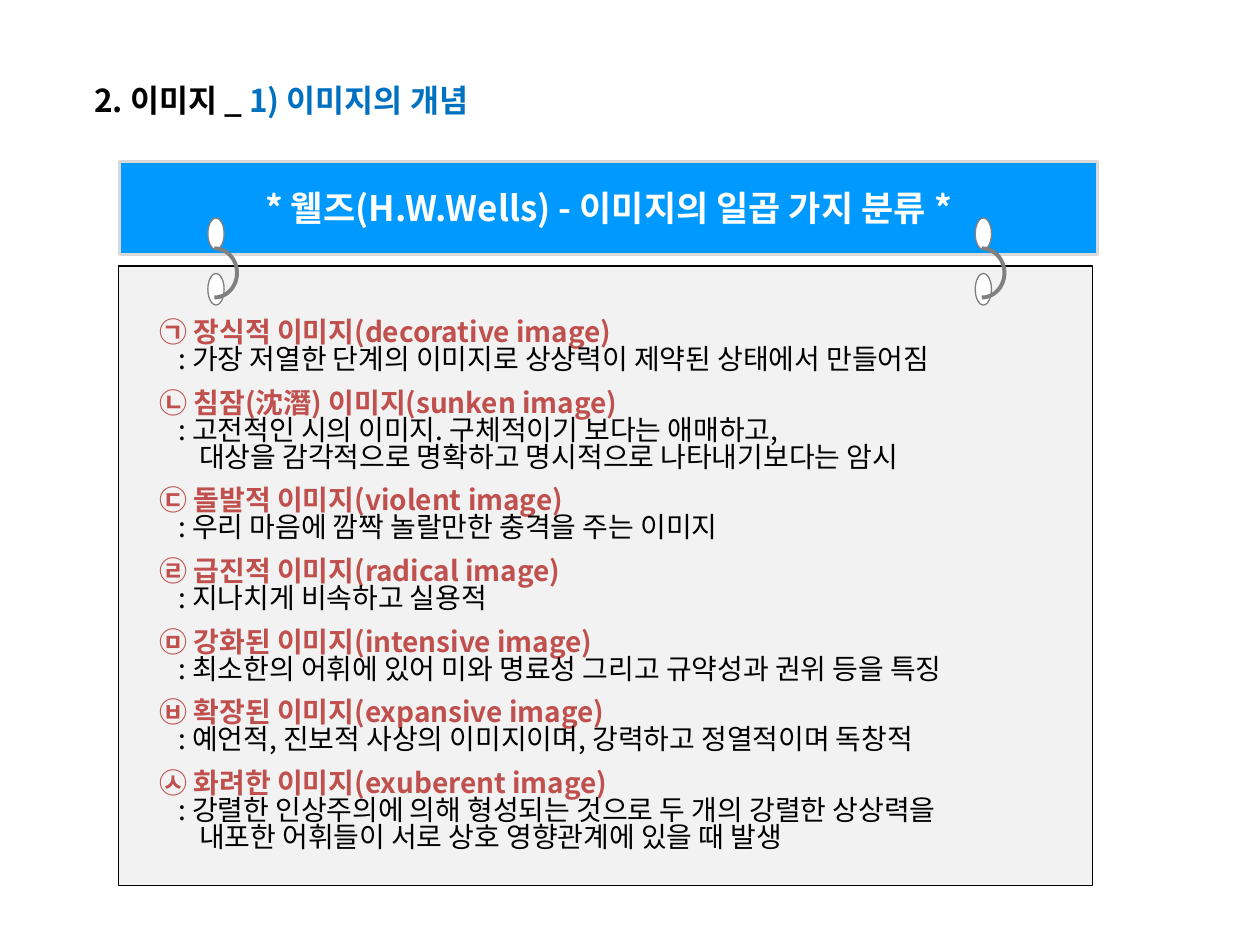
from pptx import Presentation
from pptx.dml.color import RGBColor
from pptx.enum.shapes import MSO_SHAPE
from pptx.enum.text import MSO_ANCHOR, PP_ALIGN
from pptx.util import Pt

FONT = "Noto Sans CJK KR"
BLACK, WHITE, GRAY = "000000", "FFFFFF", "808080"
RED, BLUE = "C0504D", "0070C0"
ITEMS = [
    ("㉠ 장식적 이미지(decorative image)",
     ["가장 저열한 단계의 이미지로 상상력이 제약된 상태에서 만들어짐"]),
    ("㉡ 침잠(沈潛) 이미지(sunken image)",
     ["고전적인 시의 이미지. 구체적이기 보다는 애매하고,",
      "대상을 감각적으로 명확하고 명시적으로 나타내기보다는 암시"]),
    ("㉢ 돌발적 이미지(violent image)",
     ["우리 마음에 깜짝 놀랄만한 충격을 주는 이미지"]),
    ("㉣ 급진적 이미지(radical image)",
     ["지나치게 비속하고 실용적"]),
    ("㉤ 강화된 이미지(intensive image)",
     ["최소한의 어휘에 있어 미와 명료성 그리고 규약성과 권위 등을 특징"]),
    ("㉥ 확장된 이미지(expansive image)",
     ["예언적, 진보적 사상의 이미지이며, 강력하고 정열적이며 독창적"]),
    ("㉦ 화려한 이미지(exuberent image)",
     ["강렬한 인상주의에 의해 형성되는 것으로 두 개의 강렬한 상상력을",
      "내포한 어휘들이 서로 상호 영향관계에 있을 때 발생"]),
]


def color(code):
    return RGBColor.from_string(code)


def shape(slide, kind, box, fill=None, line=BLACK, width=0.75):
    item = slide.shapes.add_shape(kind, *map(Pt, box))
    item.shadow.inherit = False
    if fill:
        item.fill.solid()
        item.fill.fore_color.rgb = color(fill)
    else:
        item.fill.background()
    item.line.color.rgb = color(line)
    item.line.width = Pt(width)
    return item


def frame(slide, box):
    area = slide.shapes.add_textbox(*map(Pt, box)).text_frame
    area.word_wrap = True
    return area


def text(par, words, size=16, ink=BLACK, bold=False, align=None,
         pitch=None, before=0, indent=0):
    """Add a run to a paragraph and set the format of both."""
    run = par.add_run()
    run.text = words
    font = run.font
    font.name, font.size, font.bold = FONT, Pt(size), bold
    font.color.rgb = color(ink)
    props = run._r.get_or_add_rPr()
    east = props.makeelement(
        "{http://schemas.openxmlformats.org/drawingml/2006/main}ea",
        {"typeface": FONT})
    props.append(east)
    if align is not None:
        par.alignment = align
    if pitch:
        par.line_spacing = Pt(pitch)
    if before:
        par.space_before = Pt(before)
    if indent:
        par._p.get_or_add_pPr().set("marL", str(Pt(indent)))


def title(slide, box):
    par = frame(slide, box).paragraphs[0]
    text(par, "2. 이미지 _", size=18, bold=True, pitch=22)
    text(par, " 1) 이미지의 개념", size=18, ink=BLUE, bold=True)


def banner(slide, box):
    area = shape(slide, MSO_SHAPE.RECTANGLE, box, "0099FF", "D9D9D9", 2).text_frame
    area.vertical_anchor = MSO_ANCHOR.MIDDLE
    text(area.paragraphs[0], "* 웰즈(H.W.Wells) - 이미지의 일곱 가지 분류 *",
         size=20, ink=WHITE, bold=True, align=PP_ALIGN.CENTER)


def panel(slide, box):
    left, top, width, _ = box
    shape(slide, MSO_SHAPE.RECTANGLE, box, "F2F2F2")
    area = frame(slide, (left + 16.5, top + 28, width - 22.5, 314))
    par = area.paragraphs[0]
    look = {"align": PP_ALIGN.JUSTIFY, "pitch": 15.4}
    for n, (head, lines) in enumerate(ITEMS):
        if n:
            par = area.add_paragraph()
        text(par, head, ink=RED, bold=True, before=9.6 if n else 0, **look)
        for k, line in enumerate(lines):
            text(area.add_paragraph(), line if k else ": " + line,
                 indent=22.5 if k else 10.5, **look)


def ring(slide, left, top):
    """Draw a binder ring: two holes joined by a half circle."""
    for drop in (0, 31.7):
        shape(slide, MSO_SHAPE.OVAL, (left, top + drop, 9.3, 18), WHITE, GRAY)
    arc = shape(slide, MSO_SHAPE.ARC, (left - 9.2, top + 17.3, 25.9, 28.1),
                line=GRAY, width=2.25)
    arc.adjustments[1] = 54  # 90 degrees, in units of 100000/60000 degree


def main():
    deck = Presentation()
    deck.slide_width, deck.slide_height = Pt(720), Pt(540)
    slide = deck.slides.add_slide(deck.slide_layouts[6])
    panel(slide, (67.7, 152, 556.5, 354.2))
    title(slide, (46.8, 42.5, 352.8, 28.8))
    banner(slide, (68.4, 92.2, 558.7, 53.3))
    for left in (557.3, 118.8):
        ring(slide, left, 124.6)
    deck.save("out.pptx")


if __name__ == "__main__":
    main()
